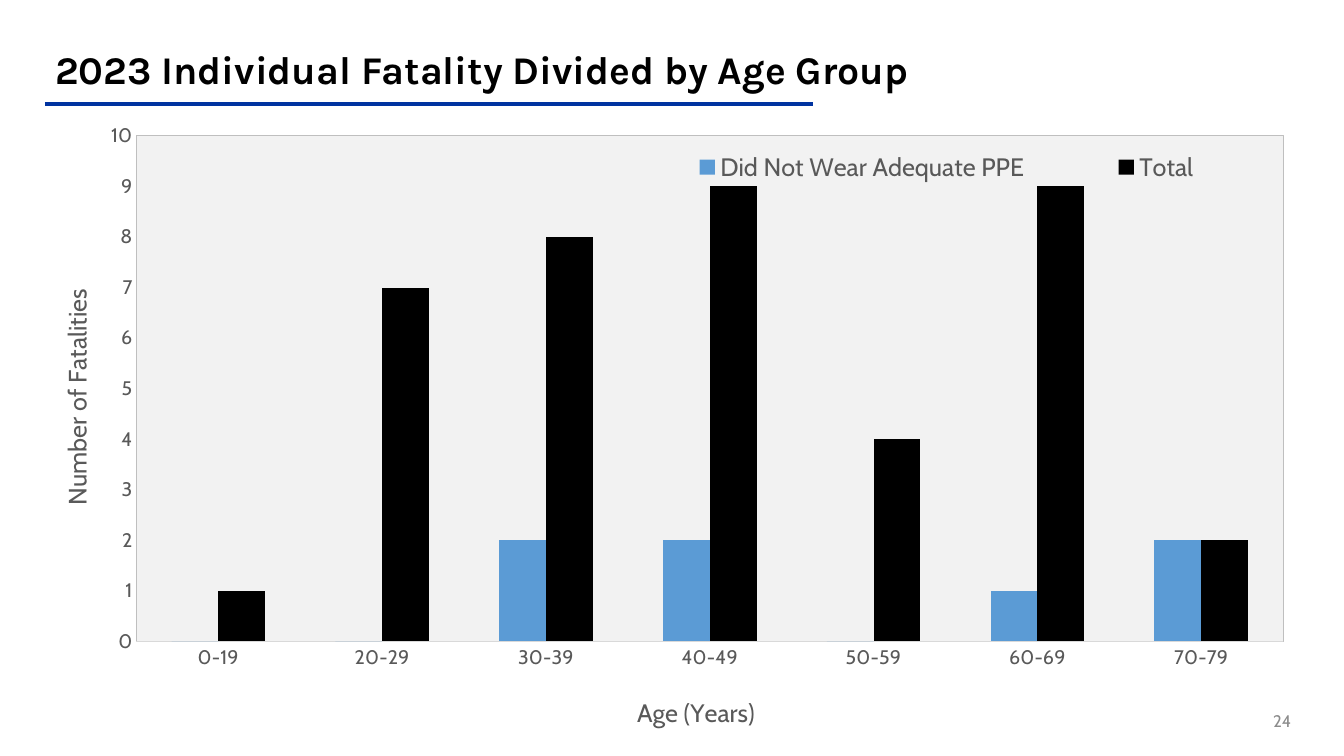
"""Build the slide on 2023 individual fatalities by age group."""
from lxml import etree
from pptx import Presentation
from pptx.chart.data import CategoryChartData
from pptx.dml.color import RGBColor
from pptx.enum.chart import XL_CHART_TYPE, XL_LEGEND_POSITION, XL_TICK_MARK
from pptx.enum.shapes import MSO_CONNECTOR
from pptx.enum.text import MSO_ANCHOR, PP_ALIGN
from pptx.oxml import parse_xml
from pptx.oxml.ns import nsdecls, qn
from pptx.util import Pt

COLUMNS = XL_CHART_TYPE.COLUMN_CLUSTERED
LEGEND_BOTTOM = XL_LEGEND_POSITION.BOTTOM
NO_TICKS = XL_TICK_MARK.NONE
STRAIGHT = MSO_CONNECTOR.STRAIGHT
MIDDLE = MSO_ANCHOR.MIDDLE
LEFT, RIGHT = PP_ALIGN.LEFT, PP_ALIGN.RIGHT
BODY_FONT, TITLE_FONT = "Cabin", "Karla"
GREY = "595959"
color = RGBColor.from_string


def write(frame, text, size, hue, font=BODY_FONT, bold=False, align=None, spacing=None):
    para = frame.paragraphs[0]
    para.alignment = align
    para.line_spacing = spacing
    span = para.add_run()
    span.text = text
    span.font.name = font
    span.font.size = Pt(size)
    span.font.bold = bold
    span.font.color.rgb = color(hue)


def place(element, index, **fractions):
    for old in element.findall(qn("c:layout")):
        element.remove(old)
    layout = parse_xml(f"<c:layout {nsdecls('c')}><c:manualLayout/></c:layout>")
    if "w" in fractions:
        etree.SubElement(layout[0], qn("c:layoutTarget")).set("val", "inner")
    for key in ("x", "y"):
        etree.SubElement(layout[0], qn(f"c:{key}Mode")).set("val", "edge")
    for key, value in fractions.items():
        etree.SubElement(layout[0], qn(f"c:{key}")).set("val", str(value))
    element.insert(index, layout)


deck = Presentation()
deck.slide_width, deck.slide_height = Pt(960), Pt(540)
page = deck.slides.add_slide(deck.slide_layouts[6])

rule = page.shapes.add_connector(STRAIGHT, Pt(32), Pt(74.4), Pt(585 - 4), Pt(74.4))
rule.line.color.rgb = color("0033A0")
rule.line.width = Pt(3)
etree.SubElement(rule._element.spPr, qn("a:effectLst"))

texts = [
    ((32.4, 28.8, 895, 45.4), "2023 Individual Fatality Divided by Age Group",
     dict(size=28, hue="000000", font=TITLE_FONT, bold=True, align=LEFT, spacing=0.9)),
    ((886.3, 500.4, 43.2, 28.8), "24", dict(size=12, hue="8C8C8C", align=RIGHT)),
]
for bounds, text, style in texts:
    box = page.shapes.add_textbox(*map(Pt, bounds))
    box.text_frame.word_wrap = True
    box.text_frame.vertical_anchor = MIDDLE
    write(box.text_frame, text, **style)

series = [
    ("Did Not Wear Adequate PPE", (0, 0, 2, 2, 0, 1, 2), "5B9BD5"),
    ("Total", (1, 7, 8, 9, 4, 9, 2), "000000"),
]
data = CategoryChartData()
data.categories = ["0-19"] + [f"{age}-{age + 9}" for age in range(20, 80, 10)]
for name, values, hue in series:
    data.add_series(name, values)
chart = page.shapes.add_chart(COLUMNS, Pt(30.2), Pt(82.8), Pt(897.1), Pt(446.4), data).chart
chart.has_title = False
chart.font.name = BODY_FONT
chart.font.size = Pt(10)

plot = chart.plots[0]
plot.gap_width = 150
plot.overlap = 0
plot.vary_by_categories = False
for bars, (name, values, hue) in zip(plot.series, series):
    bars.format.fill.solid()
    bars.format.fill.fore_color.rgb = color(hue)

ages, counts = chart.category_axis, chart.value_axis
for axis, title, x, y in (
    (ages, "Age (Years)", 0.47, 0.92),
    (counts, "Number of Fatalities", 0.01, 0.27),
):
    axis.has_major_gridlines = False
    axis.major_tick_mark = axis.minor_tick_mark = NO_TICKS
    axis.tick_labels.font.name = BODY_FONT
    axis.tick_labels.font.size = Pt(14)
    axis.tick_labels.font.color.rgb = color(GREY)
    write(axis.axis_title.text_frame, title, 18, GREY)
    place(axis.axis_title._element, 1, x=x, y=y)
ages.format.line.color.rgb = color("D9D9D9")
ages.format.line.width = Pt(0.75)
counts.format.line.fill.background()
counts.minimum_scale, counts.maximum_scale, counts.major_unit = 0, 10, 1

chart.has_legend = True
legend = chart.legend
legend.position = LEGEND_BOTTOM
legend.include_in_layout = True
legend.font.name = BODY_FONT
legend.font.size = Pt(18)
legend.font.color.rgb = color(GREY)
place(legend._element, 1, x=0.455, y=0.052, w=0.53, h=0.06)
legend._element.find(qn("c:layout"))[0].remove(legend._element.find(qn("c:layout"))[0][0])

plot_area = chart._chartSpace.chart.plotArea
place(plot_area, 0, x=0.075, y=0.032, w=0.913, h=0.809)
plot_area.append(parse_xml(
    f"<c:spPr {nsdecls('c', 'a')}>"
    '<a:solidFill><a:srgbClr val="F2F2F2"/></a:solidFill>'
    '<a:ln w="9525"><a:solidFill><a:srgbClr val="BFBFBF"/></a:solidFill></a:ln>'
    "</c:spPr>"
))

deck.save("out.pptx")
